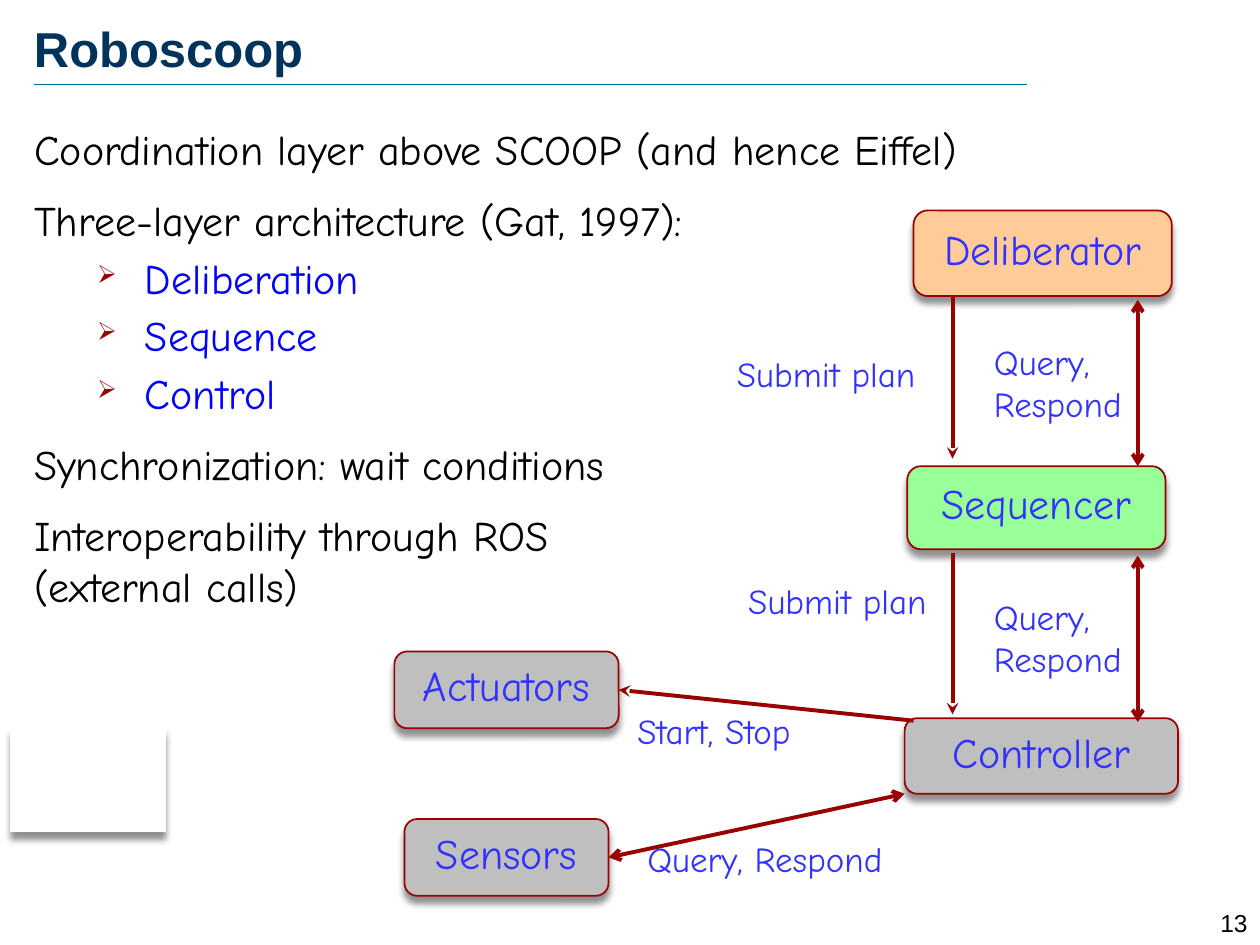
"""Build the Roboscoop slide: three-layer robot architecture with its message flow."""
import lxml.etree
import pptx
import pptx.dml.color
import pptx.enum.shapes
import pptx.enum.text
import pptx.oxml.ns
import pptx.util

RGB = pptx.dml.color.RGBColor
NAVY, TEAL, BLACK = RGB(0, 51, 91), RGB(0, 102, 153), RGB(0, 0, 0)
BLUE, INDIGO, MAROON = RGB(0, 0, 255), RGB(51, 51, 255), RGB(153, 0, 0)
PEACH, GREEN = RGB(255, 204, 153), RGB(153, 255, 153)
GREY, WHITE = RGB(191, 191, 191), RGB(255, 255, 255)
Pt, qn = pptx.util.Pt, pptx.oxml.ns.qn
SHAPE, ALIGN = pptx.enum.shapes.MSO_SHAPE, pptx.enum.text.PP_ALIGN
ANCHOR, AUTO = pptx.enum.text.MSO_ANCHOR, pptx.enum.text.MSO_AUTO_SIZE

prs = pptx.Presentation()
prs.slide_width, prs.slide_height = pptx.util.Inches(10), pptx.util.Inches(7.5)
s = prs.slides.add_slide(prs.slide_layouts[6])
CELL = prs.slide_width / 100
TIGHT = {"margin_left": 0, "margin_right": 0, "margin_top": int(0.4 * CELL),
         "margin_bottom": int(0.4 * CELL), "word_wrap": True}


def write(tf, frame, paragraphs, font, color, para={}):
    for k, v in frame.items():
        setattr(tf, k, v)
    for i, text in enumerate(paragraphs):
        p = tf.paragraphs[0] if i == 0 else tf.add_paragraph()
        p.text = text
        for k, v in para.items():
            setattr(p, k, v)
        for r in p.runs:
            r.font.color.rgb = color
            for k, v in font.items():
                setattr(r.font, k, v)


def connect(x1, y1, x2, y2, color=MAROON, width=2.25, **ends):
    c = s.shapes.add_connector(pptx.enum.shapes.MSO_CONNECTOR.STRAIGHT,
                               *[int(v * CELL) for v in (x1, y1, x2, y2)])
    c.line.color.rgb, c.line.width = color, Pt(width)
    ln = c.line._get_or_add_ln()
    for end, kind in ends.items():
        lxml.etree.SubElement(ln, qn("a:" + end)).set("type", kind)
    lxml.etree.SubElement(c._element.spPr, qn("a:effectLst"))
    return c


connect(2.7, 6.7, 81.5, 6.7, TEAL, 0.25)

for at, text, font, color, frame, para in [
    ((94.5, 71.6, 5.5, 2.4), "13", {"size": Pt(14), "name": "Arial"}, BLACK,
     {"word_wrap": True}, {"alignment": ALIGN.RIGHT}),
    ((2.7, 1.1, 91.7, 8.4), "Roboscoop",
     {"size": Pt(28), "name": "Arial", "bold": True}, NAVY, TIGHT, {}),
]:
    sp = s.shapes.add_textbox(*[int(v * CELL) for v in at])
    write(sp.text_frame, frame, [text], font, color, para)

tf = s.shapes.add_textbox(*[int(v * CELL) for v in (2.7, 9.4, 83.5, 62.1)]).text_frame
write(tf, TIGHT, [
    "Coordination layer above SCOOP (and hence Eiffel)",
    "Three-layer architecture (Gat, 1997):",
    "Deliberation",
    "Sequence",
    "Control",
    "Synchronization: wait conditions",
    "Interoperability through ROS\n(external calls)",
], {"size": Pt(24), "name": "Comic Neue"}, BLACK)
for p in tf.paragraphs[1:]:
    p.space_before = Pt(12)
for p in tf.paragraphs[2:5]:
    p.level, p.space_before = 1, Pt(4)
    p.runs[0].font.color.rgb = BLUE
    pPr = p._p.get_or_add_pPr()
    pPr.set("marL", str(int(8.8 * CELL)))
    pPr.set("indent", str(int(-3.8 * CELL)))
    clr = lxml.etree.SubElement(pPr, qn("a:buClr"))
    lxml.etree.SubElement(clr, qn("a:srgbClr")).set("val", str(MAROON))
    lxml.etree.SubElement(pPr, qn("a:buSzPct")).set("val", "60000")
    lxml.etree.SubElement(pPr, qn("a:buChar")).set("char", "➢")

boxes = {}
for name, at, fill, edge, kind in [
    ("Deliberator", (72.5, 16.7, 20.5, 6.8), PEACH, MAROON, SHAPE.ROUNDED_RECTANGLE),
    ("Sequencer", (72, 37, 20.5, 6.6), GREEN, MAROON, SHAPE.ROUNDED_RECTANGLE),
    ("Controller", (71.8, 57, 21.7, 6), GREY, MAROON, SHAPE.ROUNDED_RECTANGLE),
    ("Sensors", (32.1, 65, 16.2, 6.1), GREY, MAROON, SHAPE.ROUNDED_RECTANGLE),
    ("Actuators", (31.3, 51.7, 17.8, 6.1), GREY, MAROON, SHAPE.ROUNDED_RECTANGLE),
    ("", (0.9, 57.8, 12.2, 8.2), WHITE, WHITE, SHAPE.RECTANGLE),
]:
    sp = boxes[name] = s.shapes.add_shape(kind, *[int(v * CELL) for v in at])
    sp.fill.solid()
    sp.fill.fore_color.rgb = fill
    sp.line.color.rgb, sp.line.width = edge, Pt(1)
    sp.shadow.inherit = False
    shadow = lxml.etree.SubElement(sp._element.spPr.find(qn("a:effectLst")), qn("a:outerShdw"))
    for k, v in {"blurRad": Pt(4), "dist": Pt(4), "dir": 90 * 60000, "rotWithShape": 0}.items():
        shadow.set(k, str(int(v)))
    clr = lxml.etree.SubElement(shadow, qn("a:srgbClr"))
    clr.set("val", str(BLACK))
    lxml.etree.SubElement(clr, qn("a:alpha")).set("val", "43000")
    if name:
        write(sp.text_frame, {"margin_left": 0, "margin_right": 0, "word_wrap": True,
                              "vertical_anchor": ANCHOR.MIDDLE},
              [name], {"size": Pt(24), "name": "Comic Neue"}, INDIGO,
              {"alignment": ALIGN.CENTER, "line_spacing": 0.8})

both = {"headEnd": "arrow", "tailEnd": "arrow"}
connect(71.8, 63, 48.3, 68, **both).end_connect(boxes["Sensors"], 3)
connect(72.5, 57.2, 49.1, 54.7, tailEnd="stealth").end_connect(boxes["Actuators"], 3)
for top in (23.6, 43.9):
    connect(75.6, top, 75.6, top + 12.8, tailEnd="stealth")
    connect(90.3, top + 0.2, 90.3, top + 13.4, **both)

for text, at in [
    ("Start, Stop", (49.6, 55.8, 17.6, 4.4)),
    ("Query,\nRespond", (77.9, 26.5, 13.1, 7.7)),
    ("Submit plan", (57.5, 27.5, 17.6, 4.4)),
    ("Query,\nRespond", (77.9, 46.8, 13.1, 7.7)),
    ("Submit plan", (58.4, 45.5, 17.6, 4.4)),
    ("Query, Respond", (50.4, 66, 35, 4.4)),
]:
    sp = s.shapes.add_textbox(*[int(v * CELL) for v in at])
    write(sp.text_frame, {"word_wrap": True, "auto_size": AUTO.SHAPE_TO_FIT_TEXT},
          [text], {"size": Pt(20), "name": "Comic Neue"}, INDIGO)

prs.save("out.pptx")
